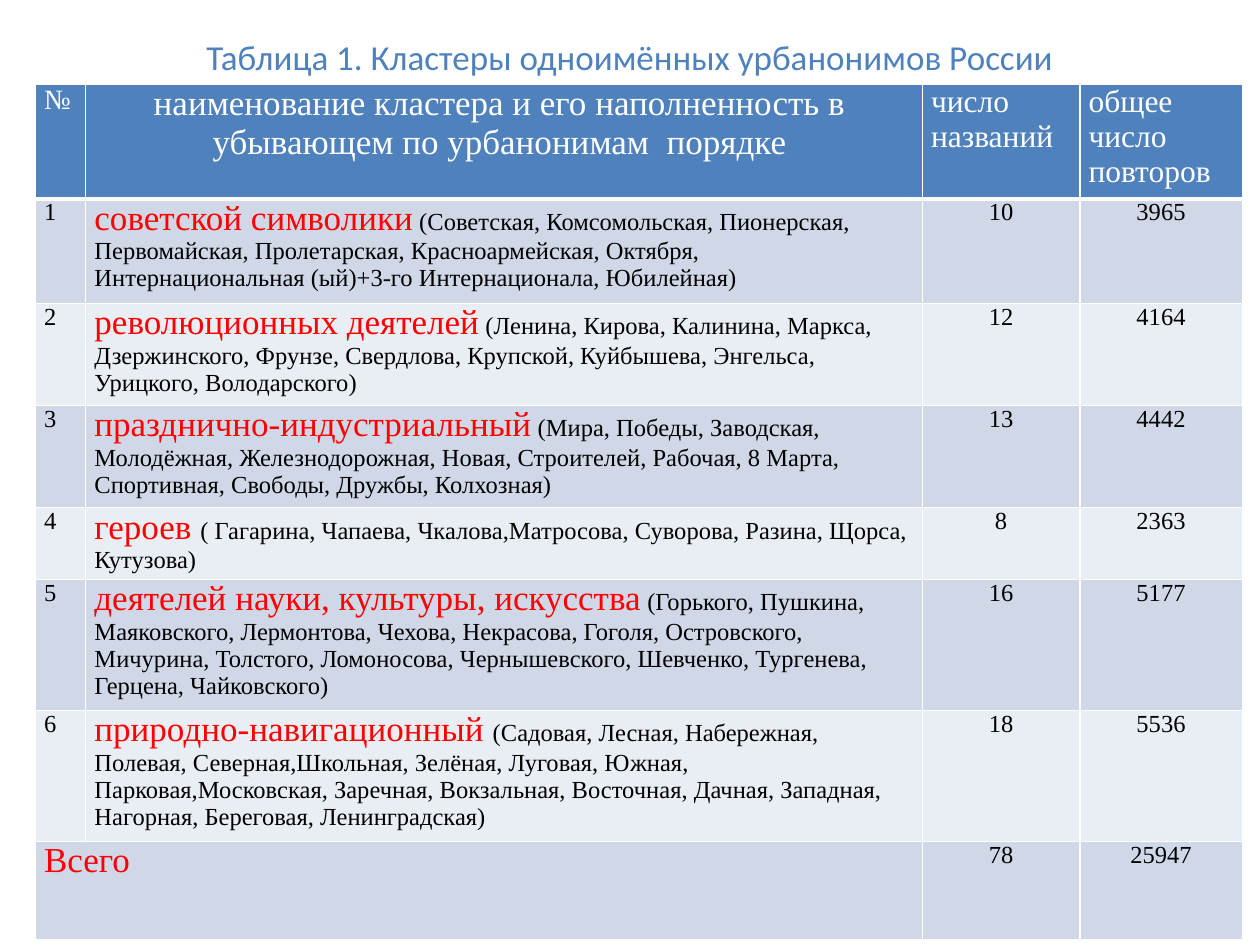
import pptx
import pptx.dml.color
import pptx.enum.text
import pptx.oxml
import pptx.oxml.ns
import pptx.util
from dataclasses import dataclass

Inches = pptx.util.Inches
ALIGN = pptx.enum.text.PP_ALIGN
ANCHOR = pptx.enum.text.MSO_ANCHOR


@dataclass(frozen=True)
class Theme:
    """Colours, fonts and type sizes of the slide."""
    blue: str = "4F81BD"
    white: str = "FFFFFF"
    black: str = "000000"
    red: str = "FF0000"
    bands: tuple = ("D0D8E8", "E9EDF4")
    sans: str = "Calibri"
    serif: str = "Times New Roman"
    large: int = 20
    label: int = 18
    mark: int = 16
    body: int = 14
    thin: int = 1
    thick: int = 3


THEME = Theme()
TITLE = "Таблица 1. Кластеры одноимённых урбанонимов России"
WIDTHS = (0.4, 6.64, 1.25, 1.29)
HEIGHTS = (0.91, 0.83, 0.81, 0.81, 0.57, 1.04, 1.04, 0.78)
HEADS = (
    ("№", THEME.mark, ALIGN.LEFT),
    ("наименование кластера и его наполненность в  убывающем по урбанонимам  порядке ",
     THEME.large, ALIGN.CENTER),
    ("число\nназваний", THEME.label, ALIGN.LEFT),
    ("общее\nчисло\nповторов", THEME.label, ALIGN.LEFT),
)
CLUSTERS = (
    ("советской символики",
     " (Советская, Комсомольская, Пионерская, Первомайская, Пролетарская, "
     "Красноармейская, Октября, Интернациональная (ый)+3-го Интернационала, Юбилейная)",
     10, 3965),
    ("революционных деятелей",
     " (Ленина, Кирова, Калинина, Маркса, Дзержинского, Фрунзе, Свердлова, "
     "Крупской, Куйбышева, Энгельса, Урицкого, Володарского)",
     12, 4164),
    ("празднично-индустриальный",
     " (Мира, Победы, Заводская, Молодёжная, Железнодорожная, Новая, Строителей, "
     "Рабочая, 8 Марта, Спортивная, Свободы, Дружбы, Колхозная)",
     13, 4442),
    ("героев ",
     "( Гагарина, Чапаева, Чкалова,Матросова, Суворова, Разина, Щорса, Кутузова)",
     8, 2363),
    ("деятелей науки, культуры, искусства",
     " (Горького, Пушкина, Маяковского, Лермонтова, Чехова, Некрасова, Гоголя, "
     "Островского, Мичурина, Толстого, Ломоносова, Чернышевского, Шевченко, "
     "Тургенева, Герцена, Чайковского)",
     16, 5177),
    ("природно-навигационный ",
     "(Садовая, Лесная, Набережная, Полевая, Северная,Школьная, Зелёная, Луговая, "
     "Южная, Парковая,Московская, Заречная, Вокзальная, Восточная, Дачная, "
     "Западная, Нагорная, Береговая, Ленинградская)",
     18, 5536),
)


def style(font, face, size, tone):
    """Set the face, size and colour of a font."""
    font.name = face
    font.size = pptx.util.Pt(size)
    font.bold = False
    font.color.rgb = pptx.dml.color.RGBColor.from_string(tone)


def write(cell, text, size, tone, align=ALIGN.LEFT):
    """Fill a cell with lines of one style."""
    cell.text = text
    for para in cell.text_frame.paragraphs:
        para.alignment = align
        style(para.font, THEME.serif, size, tone)


def edge(cell, row):
    """Draw white borders, thick between the head and the body."""
    props = cell._tc.get_or_add_tcPr()
    top = THEME.thick if row == 1 else THEME.thin
    base = THEME.thick if row == 0 else THEME.thin
    sides = (("L", THEME.thin), ("R", THEME.thin), ("T", top), ("B", base))
    for spot, (side, width) in enumerate(sides):
        props.insert(spot, pptx.oxml.parse_xml(
            f'<a:ln{side} {pptx.oxml.ns.nsdecls("a")} w="{pptx.util.Pt(width)}">'
            f'<a:solidFill><a:srgbClr val="{THEME.white}"/></a:solidFill></a:ln{side}>'))


def dress(cell, row):
    """Set the margins, fill and borders of a cell."""
    cell.margin_left = cell.margin_right = Inches(0.07)
    cell.margin_top = cell.margin_bottom = 0
    tone = THEME.bands[(row - 1) % 2] if row else THEME.blue
    cell.fill.solid()
    cell.fill.fore_color.rgb = pptx.dml.color.RGBColor.from_string(tone)
    edge(cell, row)


def add_title(slide, box):
    """Place the centred title in the box."""
    frame = slide.shapes.add_textbox(*map(Inches, box)).text_frame
    frame.word_wrap = True
    frame.vertical_anchor = ANCHOR.MIDDLE
    para = frame.paragraphs[0]
    para.text = TITLE
    para.alignment = ALIGN.CENTER
    style(para.font, THEME.sans, THEME.large, THEME.blue)


def add_grid(slide, box):
    """Place the table of clusters in the box."""
    grid = slide.shapes.add_table(
        len(HEIGHTS), len(WIDTHS), *map(Inches, box)).table
    for col, width in zip(grid.columns, WIDTHS):
        col.width = Inches(width)
    for row, height in enumerate(HEIGHTS):
        grid.rows[row].height = Inches(height)
        for cell in grid.rows[row].cells:
            dress(cell, row)

    for col, (text, size, align) in enumerate(HEADS):
        write(grid.cell(0, col), text, size, THEME.white, align)

    for row, (name, names, *counts) in enumerate(CLUSTERS, 1):
        write(grid.cell(row, 0), str(row), THEME.body, THEME.black)
        para = grid.cell(row, 1).text_frame.paragraphs[0]
        parts = ((name, THEME.large, THEME.red), (names, THEME.body, THEME.black))
        for text, size, tone in parts:
            run = para.add_run()
            run.text = text
            style(run.font, THEME.serif, size, tone)
        add_counts(grid, row, counts)

    last = len(HEIGHTS) - 1
    grid.cell(last, 0).merge(grid.cell(last, 1))
    write(grid.cell(last, 0), "Всего", THEME.large, THEME.red)
    add_counts(grid, last, (78, 25947))


def add_counts(grid, row, counts):
    """Write the two centred counts of a row."""
    for col, count in enumerate(counts, 2):
        write(grid.cell(row, col), str(count), THEME.body, THEME.black, ALIGN.CENTER)


def main():
    """Build and save the slide."""
    deck = pptx.Presentation()
    deck.slide_width, deck.slide_height = Inches(10), Inches(7.5)
    slide = deck.slides.add_slide(deck.slide_layouts[6])
    add_title(slide, (0.5, 0, 9, 0.89))
    add_grid(slide, (0.28, 0.67, sum(WIDTHS), sum(HEIGHTS)))
    deck.save("out.pptx")


if __name__ == "__main__":
    main()
